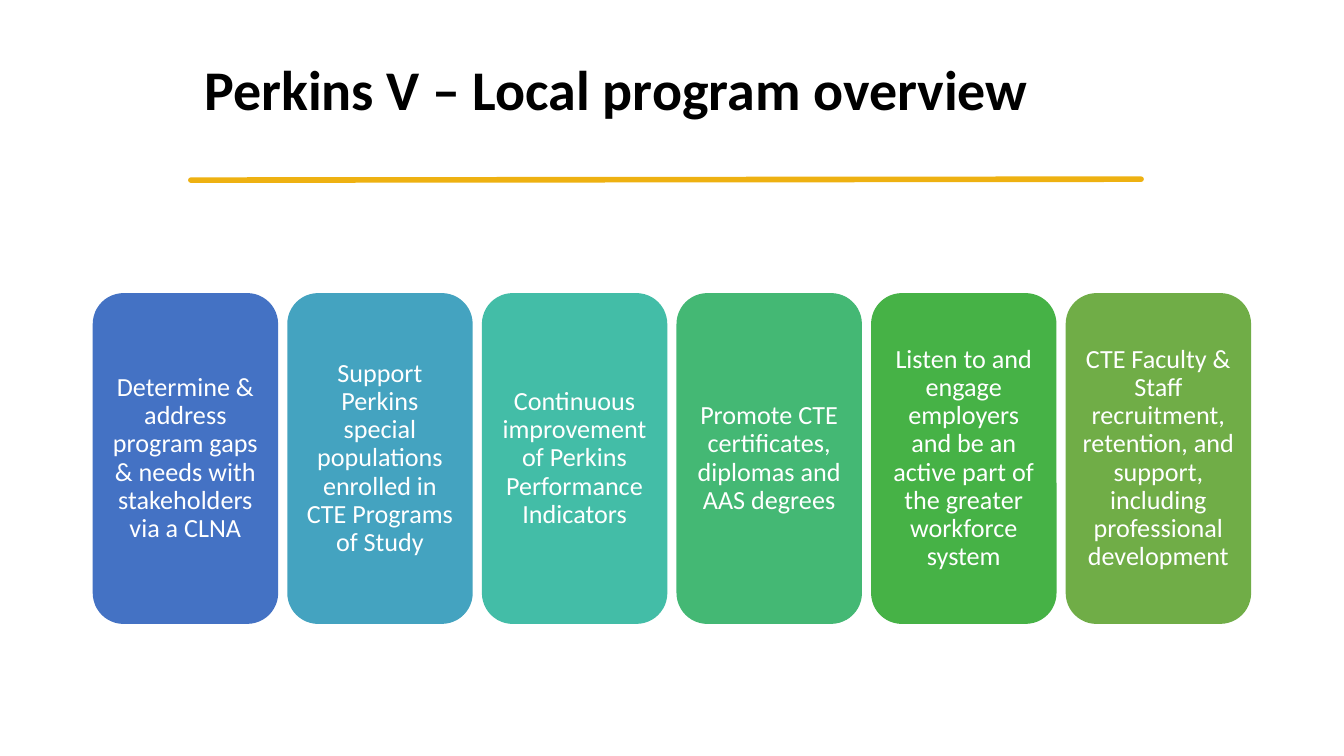
from dataclasses import dataclass

from lxml import etree
from pptx import Presentation
from pptx.dml.color import RGBColor
from pptx.enum import shapes, text
from pptx.oxml import ns
from pptx.util import Pt

FONT = "Calibri"
CARD_LEFT, CARD_TOP = 49.65, 157
CARD_WIDTH, CARD_HEIGHT = 99.35, 177.25
CARD_STEP = 104.25
CARD_INSET = 4.2


@dataclass
class Card:
    label: str
    fill: str


CARDS = [
    Card("Determine & address program gaps & needs with stakeholders via a CLNA", "4472C4"),
    Card("Support Perkins special populations enrolled in CTE Programs of Study", "44A3C0"),
    Card("Continuous improvement of Perkins Performance Indicators", "43BDA7"),
    Card("Promote CTE certificates, diplomas and AAS degrees", "44B874"),
    Card("Listen to and engage employers and be an active part of the greater workforce system", "46B246"),
    Card("CTE Faculty & Staff recruitment, retention, and support, including professional development", "70AD47"),
]


def color(value: str) -> RGBColor:
    return RGBColor.from_string(value)


def format_paragraph(paragraph, size: float, hex_color: str, alignment, bold: bool = False) -> None:
    paragraph.alignment = alignment
    paragraph.line_spacing = 0.9
    paragraph.font.name = FONT
    paragraph.font.size = Pt(size)
    paragraph.font.bold = bold
    paragraph.font.color.rgb = color(hex_color)


def add_rule(slide) -> None:
    line = slide.shapes.add_connector(
        shapes.MSO_CONNECTOR.STRAIGHT, Pt(102.25), Pt(96.5), Pt(611.3), Pt(96))
    line.line.color.rgb = color("EEB111")
    line.line.width = Pt(3)
    line.line._get_or_add_ln().set("cap", "rnd")
    etree.SubElement(line._element.spPr, ns.qn("a:effectLst"))


def add_title(slide, label: str) -> None:
    title = slide.shapes.title
    title.left, title.top, title.width, title.height = Pt(102.25), Pt(10), Pt(579.6), Pt(78.5)
    title.text_frame.text = label
    title.text_frame.vertical_anchor = text.MSO_ANCHOR.MIDDLE
    format_paragraph(title.text_frame.paragraphs[0], 30, "000000", text.PP_ALIGN.LEFT, bold=True)


def add_card(slide, card: Card, left: float) -> None:
    shape = slide.shapes.add_shape(
        shapes.MSO_SHAPE.ROUNDED_RECTANGLE, Pt(left), Pt(CARD_TOP), Pt(CARD_WIDTH), Pt(CARD_HEIGHT))
    shape.shadow.inherit = False
    shape.fill.solid()
    shape.fill.fore_color.rgb = color(card.fill)
    shape.line.fill.background()
    frame = shape.text_frame
    frame.word_wrap = True
    frame.vertical_anchor = text.MSO_ANCHOR.MIDDLE
    frame.margin_left = frame.margin_right = Pt(CARD_INSET)
    frame.margin_top = frame.margin_bottom = Pt(CARD_INSET)
    frame.text = card.label
    format_paragraph(frame.paragraphs[0], 14, "FFFFFF", text.PP_ALIGN.CENTER)


def main() -> None:
    presentation = Presentation()
    presentation.slide_width, presentation.slide_height = Pt(720), Pt(405)
    slide = presentation.slides.add_slide(presentation.slide_layouts[5])

    # Heading and the rule below it
    add_rule(slide)
    add_title(slide, "Perkins V – Local program overview")

    # Row of equal cards
    for index, card in enumerate(CARDS):
        add_card(slide, card, CARD_LEFT + index * CARD_STEP)

    presentation.save("out.pptx")


if __name__ == "__main__":
    main()
